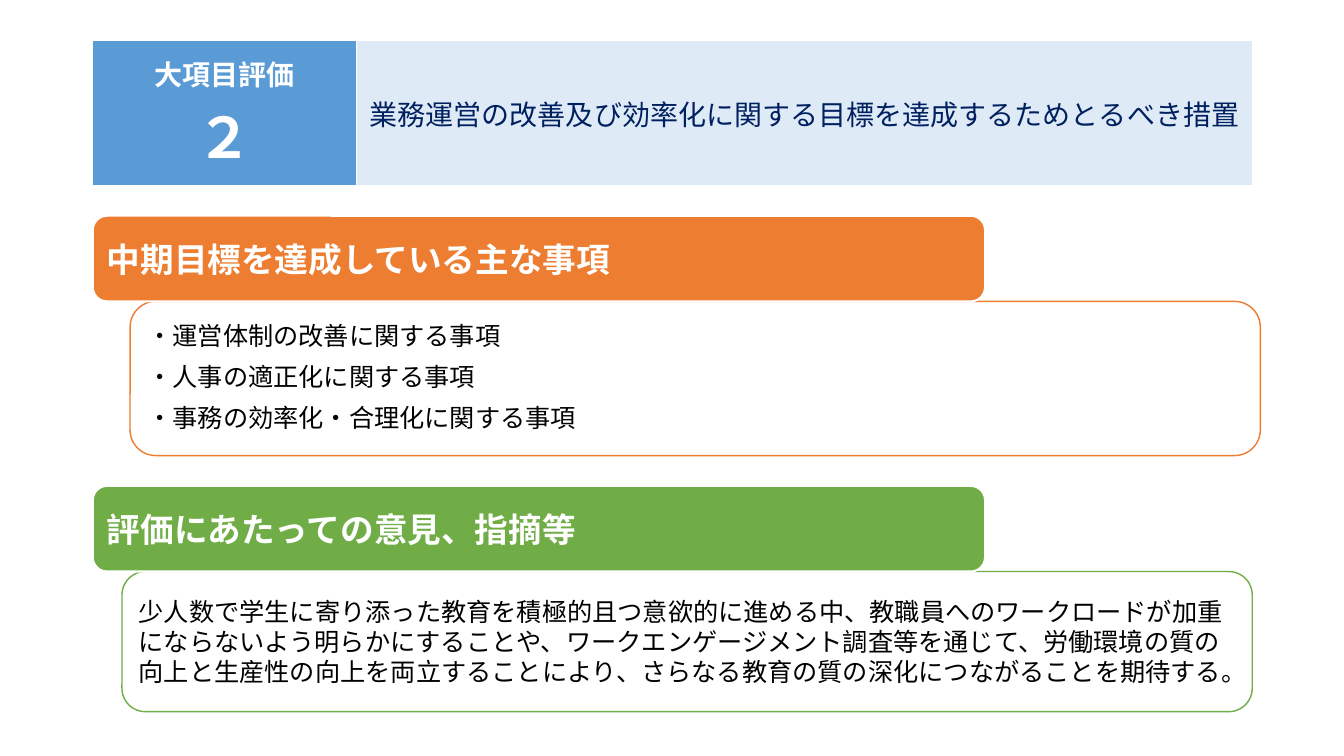
from lxml.etree import SubElement
from pptx import Presentation
from pptx.dml.color import RGBColor
from pptx.enum.shapes import MSO_SHAPE as Shape
from pptx.enum.text import MSO_ANCHOR as Anchor, PP_ALIGN as Align
from pptx.oxml.ns import qn
from pptx.util import Emu, Pt

WHITE = RGBColor(0xFF, 0xFF, 0xFF)
BLACK = RGBColor(0, 0, 0)
NAVY = RGBColor(0x00, 0x20, 0x60)
BLUE = RGBColor(0x5B, 0x9B, 0xD5)
PALE_BLUE = RGBColor(0xDE, 0xEB, 0xF7)
ORANGE = RGBColor(0xED, 0x7D, 0x31)
GREEN = RGBColor(0x70, 0xAD, 0x47)

CJK_FONT = "Noto Sans CJK JP"
LEFT = 92


def px(length):
    """Convert px to EMU, at 100 px to the inch."""
    return Emu(length * 9144)


class SlideBuilder:
    def __init__(self, page):
        self.page = page

    def add_lines(self, frame, lines, color, font=CJK_FONT, bold=False, **layout):
        """Add (text, size) lines, one paragraph each."""
        for index, (text, size) in enumerate(lines):
            para = frame.add_paragraph() if index else frame.paragraphs[0]
            for name, value in layout.items():
                setattr(para, name, value)
            span = para.add_run()
            span.text = text
            style = {"name": font, "size": Pt(size), "bold": bold}
            for name, value in style.items():
                setattr(span.font, name, value)
            span.font.color.rgb = color
            east_asian = SubElement(span.font._element, qn("a:ea"))
            east_asian.set("typeface", CJK_FONT)

    def rounded_box(self, bounds, fill, line, width, lines, color, **style):
        box = self.page.shapes.add_shape(Shape.ROUNDED_RECTANGLE, *map(px, bounds))
        box.shadow.inherit = False
        box.fill.solid()
        box.fill.fore_color.rgb = fill
        box.line.color.rgb = line
        box.line.width = Pt(width)
        box.text_frame.word_wrap = True
        box.text_frame.vertical_anchor = Anchor.MIDDLE
        self.add_lines(box.text_frame, lines, color, alignment=Align.LEFT, **style)

    def borders(self, cell):
        properties = cell._tc.get_or_add_tcPr()
        for side, points in (("L", 1), ("R", 1), ("T", 1), ("B", 3)):
            line = SubElement(properties, qn(f"a:ln{side}"), w=str(Pt(points)))
            fill = SubElement(line, qn("a:solidFill"))
            SubElement(fill, qn("a:srgbClr"), val=str(WHITE))

    def header_table(self, bounds, widths, cells):
        table = self.page.shapes.add_table(1, len(cells), *map(px, bounds)).table
        table.first_row = table.horz_banding = False
        cell_format = {
            "vertical_anchor": Anchor.MIDDLE,
            "margin_left": px(4), "margin_right": px(4),
            "margin_top": 0, "margin_bottom": 0,
        }
        for index, (fill, color, bold, lines) in enumerate(cells):
            table.columns[index].width = px(widths[index])
            cell = table.cell(0, index)
            for name, value in cell_format.items():
                setattr(cell, name, value)
            self.borders(cell)
            cell.fill.solid()
            cell.fill.fore_color.rgb = fill
            self.add_lines(cell.text_frame, lines, color, "Calibri", bold,
                           alignment=Align.CENTER)

    def section(self, top, color, heading, body_left, body_height, lines, **spacing):
        """Draw a body panel with its heading bar resting on top."""
        bar_height = 85
        self.rounded_box((body_left, top + bar_height, 1121, body_height),
                         WHITE, color, 1, lines, BLACK, **spacing)
        self.rounded_box((LEFT, top, 885, bar_height),
                         color, WHITE, 1.5, [(heading, 24)], WHITE, bold=True)


def main():
    deck = Presentation()
    deck.slide_width, deck.slide_height = px(1333), px(750)
    builder = SlideBuilder(deck.slides.add_slide(deck.slide_layouts[6]))

    # Header
    builder.header_table((LEFT, 40, 1150, 145), (262, 888), [
        (BLUE, WHITE, True, [("大項目評価", 20), ("２", 40)]),
        (PALE_BLUE, NAVY, False,
         [("業務運営の改善及び効率化に関する目標を達成するためとるべき措置", 20)]),
    ])

    # Achieved goals
    goals = ["運営体制の改善", "人事の適正化", "事務の効率化・合理化"]
    builder.section(214, ORANGE, "中期目標を達成している主な事項", 129, 153,
                    [(f"・{goal}に関する事項", 18) for goal in goals],
                    line_spacing=0.9, space_before=Pt(10))

    # Opinions
    opinion = (
        "少人数で学生に寄り添った教育を積極的且つ意欲的に進める中、"
        "教職員へのワークロードが加重にならないよう明らかにすることや、"
        "ワークエンゲージメント調査等を通じて、"
        "労働環境の質の向上と生産性の向上を両立することにより、"
        "さらなる教育の質の深化につながることを期待する。"
    )
    builder.section(482, GREEN, "評価にあたっての意見、指摘等", 121, 139,
                    [(opinion, 18)])

    deck.save("out.pptx")


if __name__ == "__main__":
    main()
